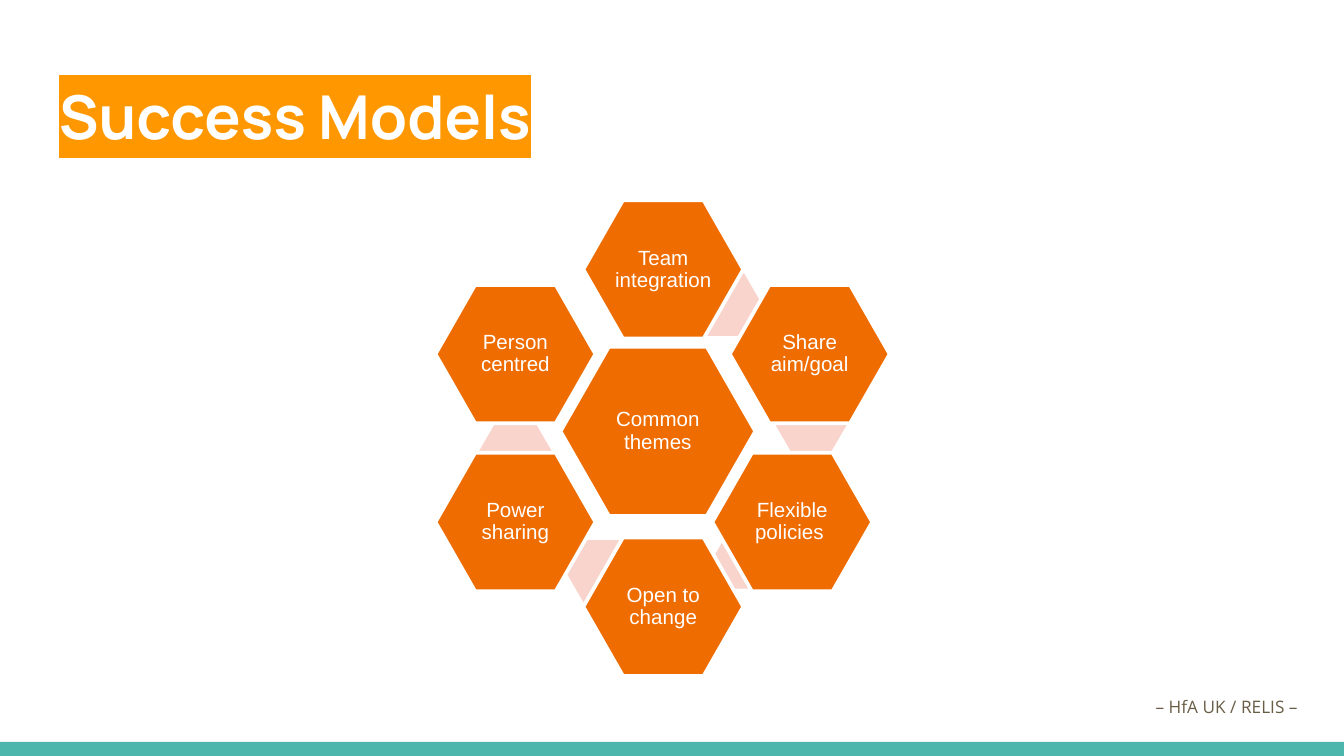
from lxml import etree
from pptx import Presentation
from pptx.dml.color import RGBColor
from pptx.enum.shapes import MSO_SHAPE
from pptx.enum.text import MSO_ANCHOR, PP_ALIGN
from pptx.oxml.ns import qn
from pptx.util import Inches, Pt

HEXAGON, RECTANGLE = MSO_SHAPE.HEXAGON, MSO_SHAPE.RECTANGLE
MIDDLE, CENTER = MSO_ANCHOR.MIDDLE, PP_ALIGN.CENTER

WHITE = RGBColor(0xFF, 0xFF, 0xFF)
ORANGE = RGBColor(0xEF, 0x6C, 0x00)
PINK = RGBColor(0xF9, 0xD4, 0xCC)
TEAL = RGBColor(0x4D, 0xB6, 0xAC)
BROWN = RGBColor(0x69, 0x5D, 0x46)
AMBER = RGBColor(0xFF, 0x98, 0x00)

TITLE = "Success Models"
FOOTER = "– HfA UK / RELIS –"
CORE = "Common themes"

# Columns and rows of the ring of hexagons
LEFT, MID, RIGHT, RIGHT_LOW = 3.24, 4.34, 5.43, 5.30
TOP, UPPER, LOWER, BOTTOM = 1.49, 2.12, 3.37, 4.00

# label, hexagon position, position of the accent behind it
THEMES = [
    ("Team integration", (MID, TOP), (5.12, 2.03)),
    ("Share aim/goal", (RIGHT, UPPER), (5.76, 2.91)),
    ("Flexible policies ", (RIGHT_LOW, LOWER), (5.31, 3.91)),
    ("Open to change", (MID, BOTTOM), (4.21, 4.02)),
    ("Power sharing", (LEFT, LOWER), (3.56, 3.13)),
    ("Person centred", (LEFT, UPPER), None),
]
CORE_POS, CORE_SIZE = (4.17, 2.58), (1.45, 1.26)
THEME_SIZE = (1.19, 1.03)
ACCENT_SIZE = (0.55, 0.47)


def set_margins(tf, margin):
    tf.margin_left = tf.margin_right = Inches(margin)
    tf.margin_top = tf.margin_bottom = Inches(margin)


def style(p, font, size, color, bold=False):
    for r in p.runs:
        r.font.name = font
        r.font.size = Pt(size)
        r.font.bold = bold
        r.font.color.rgb = color


def add_shape(shapes, kind, pos, size, fill):
    sp = shapes.add_shape(kind, *map(Inches, pos + size))
    sp.shadow.inherit = False
    sp.fill.solid()
    sp.fill.fore_color.rgb = fill
    sp.line.fill.background()
    return sp


def add_theme(shapes, label, pos, size):
    sp = add_shape(shapes, HEXAGON, pos, size, ORANGE)
    sp.adjustments[0] = 0.286
    sp.line.color.rgb = WHITE
    sp.line.width = Pt(2)
    tf = sp.text_frame
    tf.word_wrap = True
    tf.vertical_anchor = MIDDLE
    set_margins(tf, 0.02)
    tf.text = label
    p = tf.paragraphs[0]
    p.alignment = CENTER
    p.line_spacing = 0.9
    style(p, "Arial", 11, WHITE)


def add_text(s, text, pos, size):
    tf = s.shapes.add_textbox(*map(Inches, pos + size)).text_frame
    tf.word_wrap = True
    set_margins(tf, 0.1)
    tf.text = text
    return tf.paragraphs[0]


def highlight(r, color):
    mark = etree.Element(qn("a:highlight"))
    etree.SubElement(mark, qn("a:srgbClr"), val=str(color))
    r.font._element.find(qn("a:solidFill")).addnext(mark)


prs = Presentation()
prs.slide_width = Inches(10)
prs.slide_height = Inches(10 * 9 / 16)
s = prs.slides.add_slide(prs.slide_layouts[6])

p = add_text(s, FOOTER, (8.5, 5.15), (1.5, 0.32))
p.line_spacing = 0.8
style(p, "Open Sans", 9.2, BROWN)
add_shape(s.shapes, RECTANGLE, (0, 5.52), (10, 0.11), TEAL)

p = add_text(s, TITLE, (0.34, 0.49), (9.32, 0.77))
style(p, "Manrope", 32.4, WHITE, bold=True)
highlight(p.runs[0], AMBER)

ring = s.shapes.add_group_shape().shapes
add_theme(ring, CORE, CORE_POS, CORE_SIZE)
for label, pos, accent_pos in THEMES:
    if accent_pos:
        accent = add_shape(ring, HEXAGON, accent_pos, ACCENT_SIZE, PINK)
        accent.adjustments[0] = 0.289
    add_theme(ring, label, pos, THEME_SIZE)

prs.save("out.pptx")
